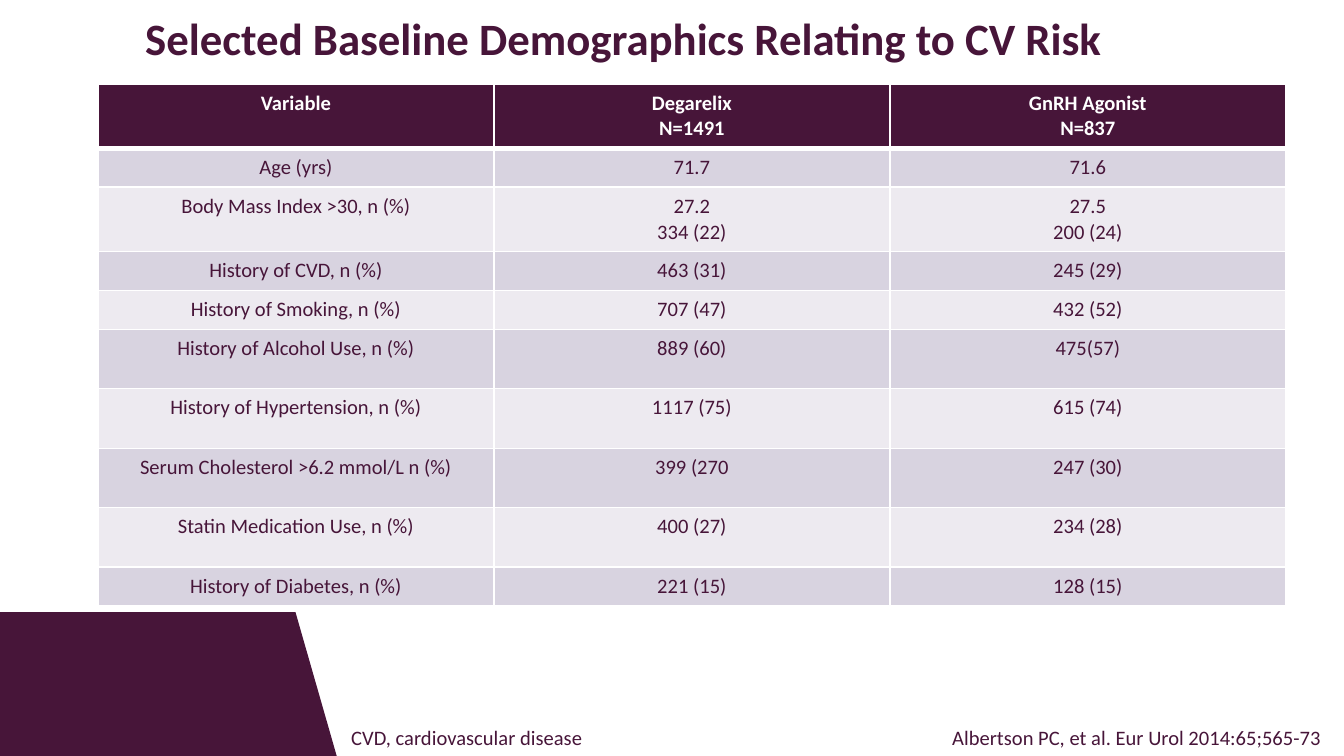
"""Builds the slide of baseline demographics relating to CV risk."""
import pptx
import pptx.dml.color
import pptx.enum.shapes
import pptx.enum.text
import pptx.oxml
import pptx.oxml.ns
import pptx.util

SHAPE = pptx.enum.shapes.MSO_SHAPE
ALIGN = pptx.enum.text.PP_ALIGN
PX = 914400 / 134.4
PLUM, WHITE = "471539", "FFFFFF"
BANDS = ("D8D3E0", "EDEAF0")

ROWS = [
    ("Variable", "Degarelix\nN=1491", "GnRH Agonist\nN=837"),
    ("Age (yrs)", "71.7", "71.6"),
    ("Body Mass Index >30, n (%)", "27.2\n334 (22)", "27.5\n200 (24)"),
    ("History of CVD, n (%)", "463 (31)", "245 (29)"),
    ("History of Smoking, n (%)", "707 (47)", "432 (52)"),
    ("History of Alcohol Use, n (%)", "889 (60)", "475(57)"),
    ("History of Hypertension, n (%)", "1117 (75)", "615 (74)"),
    ("Serum Cholesterol >6.2 mmol/L n (%)", "399 (270", "247 (30)"),
    ("Statin Medication Use, n (%)", "400 (27)", "234 (28)"),
    ("History of Diabetes, n (%)", "221 (15)", "128 (15)"),
]
ROW_HEIGHTS = (63, 39, 64, 39, 39, 59, 60, 59, 60, 39)
COLUMN_WIDTH = 396


def px(*values):
    return [pptx.util.Emu(round(v * PX)) for v in values]


def rgb(color):
    return pptx.dml.color.RGBColor.from_string(color)


class Deck:
    """Holds the text style and the current slide."""

    font = "Calibri"

    def __init__(self, width, height):
        self.prs = pptx.Presentation()
        self.prs.slide_width, self.prs.slide_height = px(width, height)
        self.s = self.prs.slides.add_slide(self.prs.slide_layouts[6])

    def set_text(self, tf, text, size, color, bold=False, align=ALIGN.LEFT):
        tf.text = text
        for p in tf.paragraphs:
            p.alignment = align
            for r in p.runs:
                r.font.name = self.font
                r.font.size = pptx.util.Pt(size)
                r.font.bold = bold
                r.font.color.rgb = rgb(color)

    def shape(self, kind, x, y, w, h, color):
        sp = self.s.shapes.add_shape(kind, *px(x, y, w, h))
        sp.shadow.inherit = False
        sp.fill.solid()
        sp.fill.fore_color.rgb = rgb(color)
        sp.line.color.rgb = rgb(color)
        sp.line.width = pptx.util.Pt(0.75)

    def text(self, x, y, w, h, text, size=11, bold=False):
        tf = self.s.shapes.add_textbox(*px(x, y, w, h)).text_frame
        tf.word_wrap = True
        tf.auto_size = pptx.enum.text.MSO_AUTO_SIZE.SHAPE_TO_FIT_TEXT
        self.set_text(tf, text, size, PLUM, bold)

    def borders(self, cell, top, bottom):
        tcPr = cell._tc.get_or_add_tcPr()
        for side, points in zip("LRTB", (1, 1, top, bottom)):
            tcPr.append(pptx.oxml.parse_xml(
                f'<a:ln{side} {pptx.oxml.ns.nsdecls("a")} w="{points * 12700}">'
                f'<a:solidFill><a:srgbClr val="{WHITE}"/></a:solidFill></a:ln{side}>'))

    def table(self, x, y, rows, column_width, heights):
        columns = len(rows[0])
        size = px(x, y, column_width * columns, sum(heights))
        table = self.s.shapes.add_table(len(rows), columns, *size).table
        for column in table.columns:
            column.width = px(column_width)[0]
        for i, (row, height) in enumerate(zip(rows, heights)):
            header = i == 0
            table.rows[i].height = px(height)[0]
            for j, text in enumerate(row):
                cell = table.cell(i, j)
                self.borders(cell, 3 if i == 1 else 1, 3 if header else 1)
                cell.fill.solid()
                cell.fill.fore_color.rgb = rgb(PLUM if header else BANDS[(i - 1) % 2])
                self.set_text(cell.text_frame, text, 11, WHITE if header else PLUM,
                              header, ALIGN.CENTER)


def main():
    deck = Deck(1344, 756)
    deck.shape(SHAPE.RECTANGLE, 0, 613, 295, 143, PLUM)
    deck.shape(SHAPE.RIGHT_TRIANGLE, 295, 613, 41, 143, PLUM)
    deck.table(98, 84, ROWS, COLUMN_WIDTH, ROW_HEIGHTS)
    deck.text(338, 718, 265, 38, "CVD, cardiovascular disease")
    deck.text(939, 718, 405, 38, "Albertson PC, et al. Eur Urol 2014:65;565-73")
    deck.text(132, 4, 1134, 68, "Selected Baseline Demographics Relating to CV Risk",
              24, True)
    deck.prs.save("out.pptx")


if __name__ == "__main__":
    main()
